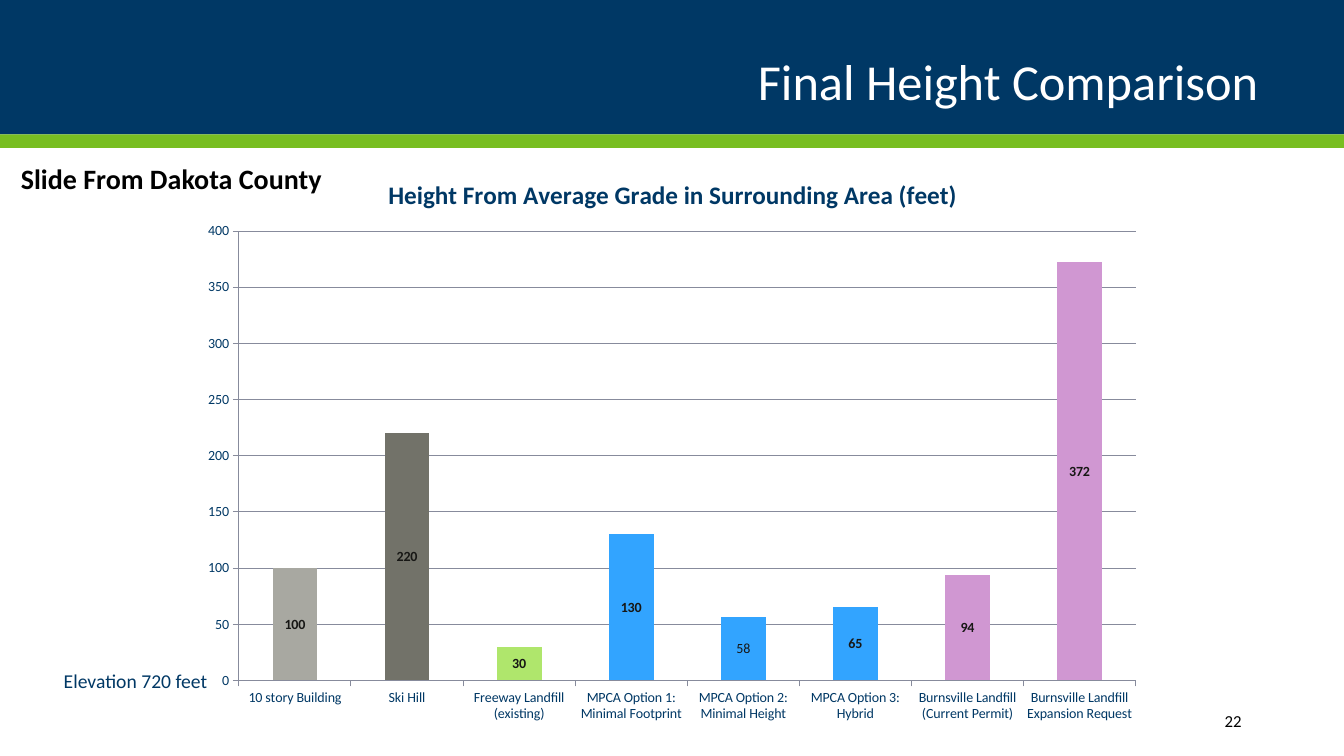
from dataclasses import dataclass

from lxml.etree import SubElement
from pptx import Presentation
from pptx.chart.data import CategoryChartData
from pptx.dml.color import RGBColor
from pptx.enum.chart import XL_CHART_TYPE as ChartType
from pptx.enum.chart import XL_LABEL_POSITION as LabelPosition
from pptx.enum.chart import XL_TICK_MARK as TickMark
from pptx.enum.shapes import MSO_SHAPE as ShapeType
from pptx.enum.text import MSO_ANCHOR as Anchor
from pptx.enum.text import MSO_AUTO_SIZE as AutoSize
from pptx.enum.text import PP_ALIGN as Align
from pptx.oxml.ns import qn
from pptx.slide import Slide
from pptx.text.text import Font
from pptx.util import Emu, Inches, Pt

FONT = "Calibri"
NAVY = RGBColor(0x00, 0x38, 0x65)
GREEN = RGBColor(0x78, 0xBE, 0x21)
WHITE = RGBColor(0xFF, 0xFF, 0xFF)
BLACK = RGBColor(0x00, 0x00, 0x00)
TEAL = RGBColor(0x00, 0x8E, 0xAA)
LABEL_INK = RGBColor(0x17, 0x17, 0x15)
GRID_GREY = RGBColor(0x87, 0x8B, 0x9C)
LIGHT_STONE = RGBColor(0xA8, 0xA8, 0xA1)
DARK_STONE = RGBColor(0x72, 0x72, 0x69)
LIME = RGBColor(0xAF, 0xE6, 0x6C)
BLUE = RGBColor(0x32, 0xA4, 0xFF)
MAUVE = RGBColor(0xD0, 0x97, 0xD2)

# The slide is a grid of square cells, twelve to the inch.
COLUMNS, ROWS = 160, 90
CELL = Inches(1) / 12


@dataclass(frozen=True)
class Box:
    column: float
    row: float
    columns: float
    rows: float

    def lengths(self) -> list[Emu]:
        cells = (self.column, self.row, self.columns, self.rows)
        return [Emu(round(count * CELL)) for count in cells]


@dataclass(frozen=True)
class Band:
    box: Box
    color: RGBColor


@dataclass(frozen=True)
class Caption:
    text: str
    box: Box
    size: int
    color: RGBColor
    bold: bool = False
    align: Align = Align.LEFT
    anchor: Anchor = Anchor.TOP
    wrap: bool = True
    grow: bool = False
    line_spacing: float = 1.0


@dataclass(frozen=True)
class Site:
    name: str
    height: int
    color: RGBColor
    label: str = ""


BANDS = [
    Band(Box(0, 0, COLUMNS, 16), NAVY),
    Band(Box(0, 16, COLUMNS, 1.6), GREEN),
]
CAPTIONS = [
    Caption("Final Height Comparison", Box(13, 4, 138, 12), 36, WHITE,
            align=Align.RIGHT, anchor=Anchor.MIDDLE, line_spacing=0.9),
    Caption("Elevation 720 feet", Box(6.4, 79, 20.3, 4), 14, NAVY,
            wrap=False, grow=True),
    Caption("Slide From Dakota County", Box(1.3, 18.6, 60.4, 5.3), 20, BLACK,
            bold=True, grow=True),
    Caption("22", Box(129.8, 83.4, 19.2, 4.8), 12, BLACK,
            align=Align.RIGHT, anchor=Anchor.MIDDLE),
]
CHART_BOX = Box(22.7, 18.6, 114.8, 68.6)
CHART_TITLE = "Height From Average Grade in Surrounding Area (feet)"
PLOT_SHARES = {"x": 0.05, "y": 0.13, "w": 0.93, "h": 0.78}
SITES = [
    Site("10 story Building", 100, LIGHT_STONE),
    Site("Ski Hill", 220, DARK_STONE),
    Site("Freeway Landfill (existing)", 30, LIME),
    Site("MPCA Option 1: Minimal Footprint", 130, BLUE),
    Site("MPCA Option 2: Minimal Height", 56, BLUE, label="58"),
    Site("MPCA Option 3: Hybrid", 65, BLUE),
    Site("Burnsville Landfill (Current Permit)", 94, MAUVE),
    Site("Burnsville Landfill Expansion Request", 372, MAUVE),
]


def style_font(font: Font, size: int, color: RGBColor, bold: bool = False) -> None:
    font.name = FONT
    font.size = Pt(size)
    font.bold = bold
    font.color.rgb = color


def add_band(slide: Slide, band: Band) -> None:
    shape = slide.shapes.add_shape(ShapeType.RECTANGLE, *band.box.lengths())
    shape.shadow.inherit = False
    shape.fill.solid()
    shape.fill.fore_color.rgb = band.color
    shape.line.fill.background()


def add_caption(slide: Slide, caption: Caption) -> None:
    frame = slide.shapes.add_textbox(*caption.box.lengths()).text_frame
    frame.word_wrap = caption.wrap
    frame.auto_size = AutoSize.SHAPE_TO_FIT_TEXT if caption.grow else AutoSize.NONE
    frame.vertical_anchor = caption.anchor
    paragraph = frame.paragraphs[0]
    paragraph.alignment = caption.align
    paragraph.line_spacing = caption.line_spacing
    run = paragraph.add_run()
    run.text = caption.text
    style_font(run.font, caption.size, caption.color, caption.bold)


def fix_plot_area(chart) -> None:
    """Pin the inner plot area to its shares of the chart's size."""
    plot_area = chart.plots[0]._element.getparent()
    layout = plot_area.find(qn("c:layout"))
    if layout is None:
        layout = SubElement(plot_area, qn("c:layout"))
        plot_area.insert(0, layout)
    manual = SubElement(layout, qn("c:manualLayout"))
    settings = {"layoutTarget": "inner", "xMode": "edge", "yMode": "edge"}
    for name, value in {**settings, **PLOT_SHARES}.items():
        SubElement(manual, qn(f"c:{name}")).set("val", str(value))


def add_height_chart(slide: Slide) -> None:
    data = CategoryChartData()
    data.categories = [site.name for site in SITES]
    data.add_series("Series 1", [site.height for site in SITES])
    chart = slide.shapes.add_chart(
        ChartType.COLUMN_STACKED, *CHART_BOX.lengths(), data).chart
    chart.has_legend = False
    style_font(chart.font, 10, NAVY)

    chart.has_title = True
    title_run = chart.chart_title.text_frame.paragraphs[0].add_run()
    title_run.text = CHART_TITLE
    style_font(title_run.font, 18, NAVY, bold=True)
    chart.chart_title.include_in_layout = False

    for axis in (chart.category_axis, chart.value_axis):
        axis.major_tick_mark = TickMark.OUTSIDE
        axis.minor_tick_mark = TickMark.NONE
        axis.format.line.color.rgb = GRID_GREY
        style_font(axis.tick_labels.font, 10, NAVY)
    scale = chart.value_axis
    scale.minimum_scale, scale.maximum_scale, scale.major_unit = 0, 400, 50
    scale.has_major_gridlines = True
    scale.major_gridlines.format.line.color.rgb = GRID_GREY

    plot = chart.plots[0]
    plot.vary_by_categories = False
    plot.gap_width, plot.overlap = 150, 100
    series = plot.series[0]
    series.format.fill.solid()
    series.format.fill.fore_color.rgb = TEAL
    labels = series.data_labels
    labels.show_value = True
    labels.position = LabelPosition.CENTER
    style_font(labels.font, 10, LABEL_INK, bold=True)
    for index, site in enumerate(SITES):
        point = series.points[index]
        point.format.fill.solid()
        point.format.fill.fore_color.rgb = site.color
        if site.label:
            run = point.data_label.text_frame.paragraphs[0].add_run()
            run.text = site.label
            style_font(run.font, 10, LABEL_INK)
            point.data_label.position = LabelPosition.CENTER
    fix_plot_area(chart)


def main() -> None:
    presentation = Presentation()
    presentation.slide_width = Emu(round(COLUMNS * CELL))
    presentation.slide_height = Emu(round(ROWS * CELL))
    slide = presentation.slides.add_slide(presentation.slide_layouts[6])
    for band in BANDS:
        add_band(slide, band)
    add_height_chart(slide)
    for caption in CAPTIONS:
        add_caption(slide, caption)
    presentation.save("out.pptx")


if __name__ == "__main__":
    main()
